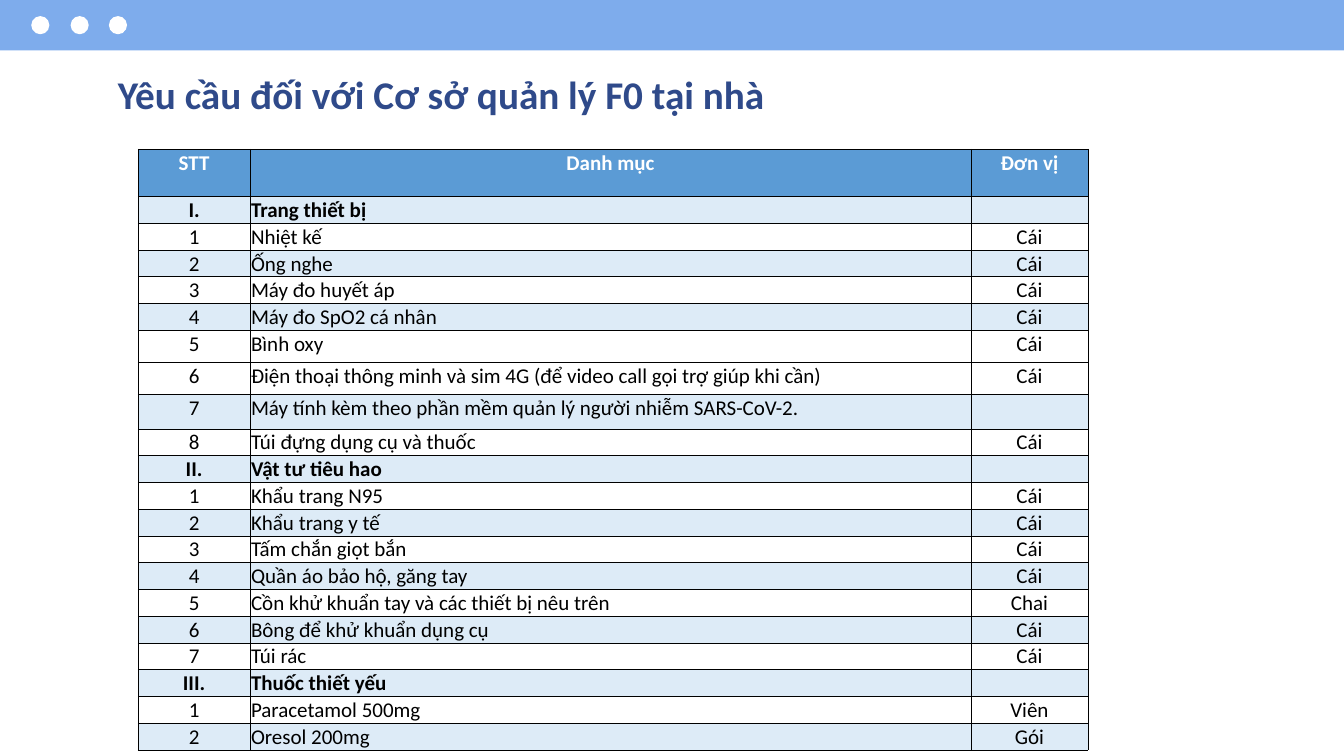
from lxml.etree import SubElement
from pptx import Presentation
from pptx.dml.color import RGBColor
from pptx.enum.shapes import MSO_SHAPE as Shape
from pptx.enum.text import MSO_ANCHOR as Anchor, PP_ALIGN as Align
from pptx.oxml.ns import qn
from pptx.util import Inches, Pt

BLACK, WHITE = "000000", "FFFFFF"
HEADER_BLUE, BAND_BLUE = "5B9BD5", "DDEBF7"


def color(value):
    return RGBColor.from_string(value)


def add_span(para, text, size, shade, bold):
    span = para.add_run()
    span.text = text
    span.font.name = "Calibri"
    span.font.size = Pt(size)
    span.font.bold = bold
    span.font.color.rgb = color(shade)


deck = Presentation()
deck.slide_width = Inches(13.33)
deck.slide_height = Inches(7.5)
page = deck.slides.add_slide(deck.slide_layouts[5])

banner = [(Shape.RECTANGLE, 0, 0, 13.33, 0.5, "7EACEC")]
dots = [(Shape.OVAL, left, 0.16, 0.18, 0.18, WHITE) for left in (0.31, 0.7, 1.08)]
for kind, left, top, width, height, shade in banner + dots:
    shape = page.shapes.add_shape(
        kind, Inches(left), Inches(top), Inches(width), Inches(height)
    )
    shape.shadow.inherit = False
    shape.fill.solid()
    shape.fill.fore_color.rgb = color(shade)
    shape.line.fill.background()

title = page.shapes.title
title.left, title.top = Inches(1.04), Inches(0.57)
title.width, title.height = Inches(11.25), Inches(0.68)
frame = title.text_frame
frame.word_wrap = True
frame.vertical_anchor = Anchor.TOP
frame.margin_left = frame.margin_right = Inches(0.13)
frame.margin_top = frame.margin_bottom = Inches(0.13)
para = frame.paragraphs[0]
para.alignment = Align.LEFT
add_span(para, "Yêu cầu đối với Cơ sở quản lý F0 tại nhà", 28, "2F4A8A", True)

rows = [
    ("STT", "Danh mục", "Đơn vị"),
    ("I.", "Trang thiết bị", ""),
    ("1", "Nhiệt kế", "Cái"),
    ("2", "Ống nghe", "Cái"),
    ("3", "Máy đo huyết áp", "Cái"),
    ("4", "Máy đo SpO2 cá nhân", "Cái"),
    ("5", "Bình oxy", "Cái"),
    ("6", "Điện thoại thông minh và sim 4G (để video call gọi trợ giúp khi cần)", "Cái"),
    ("7", "Máy tính kèm theo phần mềm quản lý người nhiễm SARS-CoV-2.", ""),
    ("8", "Túi đựng dụng cụ và thuốc", "Cái"),
    ("II.", "Vật tư tiêu hao", ""),
    ("1", "Khẩu trang N95", "Cái"),
    ("2", "Khẩu trang y tế", "Cái"),
    ("3", "Tấm chắn giọt bắn", "Cái"),
    ("4", "Quần áo bảo hộ, găng tay", "Cái"),
    ("5", "Cồn khử khuẩn tay và các thiết bị nêu trên", "Chai"),
    ("6", "Bông để khử khuẩn dụng cụ", "Cái"),
    ("7", "Túi rác", "Cái"),
    ("III.", "Thuốc thiết yếu", ""),
    ("1", "Paracetamol 500mg", "Viên"),
    ("2", "Oresol 200mg", "Gói"),
]
table_height = 5.95
tall_rows = {0: 0.47, 6: 0.32, 7: 0.32, 8: 0.34}
plain_height = (table_height - sum(tall_rows.values())) / (len(rows) - len(tall_rows))

table = page.shapes.add_table(
    len(rows), 3, Inches(1.37), Inches(1.48), Inches(9.42), Inches(table_height)
).table
table.first_row = False
table.horz_banding = False
for column, width in zip(table.columns, (1.11, 7.15, 1.16)):
    column.width = Inches(width)

for row_index, texts in enumerate(rows):
    table.rows[row_index].height = Inches(tall_rows.get(row_index, plain_height))
    is_header = row_index == 0
    is_bold = is_header or texts[0].endswith(".")
    is_banded = row_index % 2 == (1 if row_index < 7 else 0)
    for column_index, text in enumerate(texts):
        cell = table.cell(row_index, column_index)
        cell.margin_left = cell.margin_right = cell.margin_top = Inches(0.01)
        cell.margin_bottom = 0
        cell.vertical_anchor = Anchor.TOP

        properties = cell._tc.get_or_add_tcPr()
        for side in ("a:lnL", "a:lnR", "a:lnT", "a:lnB"):
            border = SubElement(properties, qn(side), w=str(Pt(0.5)))
            border_fill = SubElement(border, qn("a:solidFill"))
            SubElement(border_fill, qn("a:srgbClr"), val=BLACK)

        if is_header or is_banded:
            cell.fill.solid()
            cell.fill.fore_color.rgb = color(HEADER_BLUE if is_header else BAND_BLUE)
        else:
            cell.fill.background()

        para = cell.text_frame.paragraphs[0]
        centred = is_header or column_index != 1
        para.alignment = Align.CENTER if centred else Align.LEFT
        if text:
            add_span(para, text, 15, WHITE if is_header else BLACK, is_bold)
        else:
            SubElement(para._p, qn("a:endParaRPr"), sz="1500")

deck.save("out.pptx")
